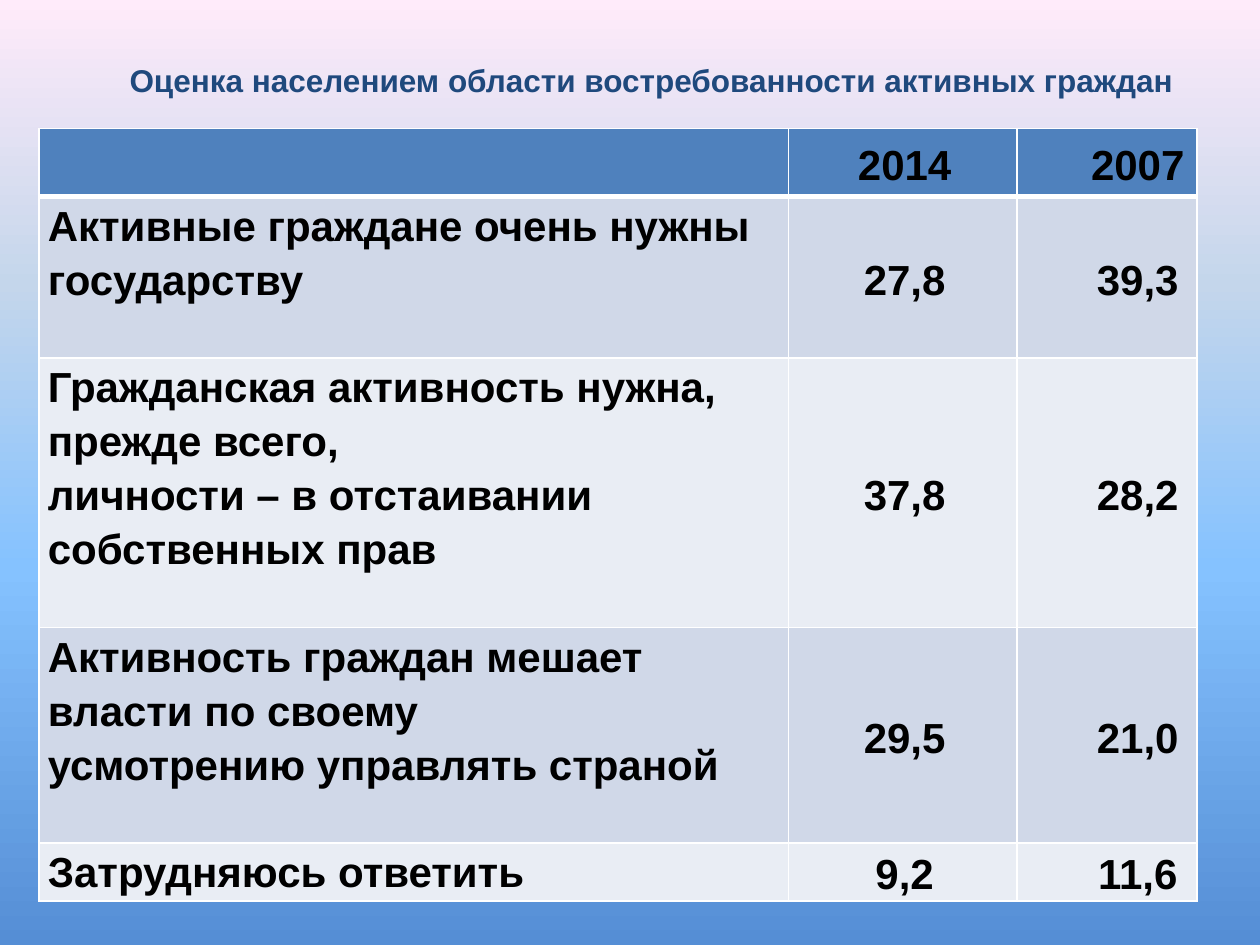
from dataclasses import dataclass

from pptx import Presentation
from pptx.dml.color import RGBColor
from pptx.enum.text import MSO_ANCHOR, PP_ALIGN
from pptx.oxml import parse_xml
from pptx.oxml.ns import nsdecls
from pptx.util import Inches, Pt


@dataclass(frozen=True)
class Theme:
    font: str = "Arial"
    title_size: int = 18
    table_size: int = 24
    title: str = "1F497D"
    text: str = "000000"
    header: str = "4F81BD"
    bands: tuple = ("D0D8E8", "E9EDF4")
    border: str = "FFFFFF"
    line: int = 1
    header_line: int = 3
    background: tuple = ((0, "558ED5"), (40, "85C2FF"), (70, "C4D6EB"), (100, "FFEBFA"))


THEME = Theme()
WIDTH, HEIGHT = 10, 7.5
TITLE_BOX = (0.51, 0.23, 9.32, 0.6)
TABLE_BOX = (0.31, 1.02, 9.19, 6.1)
COLUMNS = (5.95, 1.81, 1.43)
ROWS = (0.54, 1.28, 2.14, 1.71, 0.43)
INDENTS = (-0.02, 0.03, 0.49)

TITLE = "Оценка населением области востребованности активных граждан"
DATA = (
    ((), "2014", "2007"),
    (("Активные граждане очень нужны государству",), "27,8", "39,3"),
    (("Гражданская активность нужна, прежде всего,",
      "личности – в отстаивании собственных прав"), "37,8", "28,2"),
    (("Активность граждан мешает власти по своему",
      "усмотрению управлять страной"), "29,5", "21,0"),
    (("Затрудняюсь ответить",), "9,2", "11,6"),
)


def paint_background(slide):
    stops = "".join(
        f'<a:gs pos="{pos * 1000}"><a:srgbClr val="{color}"/></a:gs>'
        for pos, color in THEME.background)
    slide.element.cSld.insert(0, parse_xml(
        f'<p:bg {nsdecls("p", "a")}><p:bgPr><a:gradFill rotWithShape="1">'
        f'<a:gsLst>{stops}</a:gsLst><a:lin ang="16200000" scaled="0"/>'
        '</a:gradFill><a:effectLst/></p:bgPr></p:bg>'))


def add_run(p, text, size, color):
    r = p.add_run()
    r.text = text
    r.font.name = THEME.font
    r.font.size = Pt(size)
    r.font.bold = True
    r.font.color.rgb = RGBColor.from_string(color)


def add_title(slide, box):
    tf = slide.shapes.add_textbox(*map(Inches, box)).text_frame
    tf.word_wrap = True
    tf.vertical_anchor = MSO_ANCHOR.BOTTOM
    p = tf.paragraphs[0]
    p.alignment = PP_ALIGN.CENTER
    add_run(p, TITLE, THEME.title_size, THEME.title)


def style_cell(cell, row):
    cell.fill.solid()
    color = THEME.bands[(row - 1) % 2] if row else THEME.header
    cell.fill.fore_color.rgb = RGBColor.from_string(color)
    cell.margin_left = cell.margin_right = Inches(0.07)
    cell.margin_top = cell.margin_bottom = 0
    widths = {"L": THEME.line, "R": THEME.line,
              "T": THEME.header_line if row == 1 else THEME.line,
              "B": THEME.header_line if row == 0 else THEME.line}
    tcPr = cell._tc.get_or_add_tcPr()
    for i, (side, width) in enumerate(widths.items()):
        tcPr.insert(i, parse_xml(
            f'<a:ln{side} {nsdecls("a")} w="{Pt(width)}"><a:solidFill>'
            f'<a:srgbClr val="{THEME.border}"/></a:solidFill></a:ln{side}>'))


def fill_cell(cell, lines, col):
    """Write one paragraph per line; the first column holds left-aligned labels."""
    cell.vertical_anchor = MSO_ANCHOR.MIDDLE if col else MSO_ANCHOR.TOP
    tf = cell.text_frame
    for i, line in enumerate(lines):
        p = tf.add_paragraph() if i else tf.paragraphs[0]
        p.alignment = PP_ALIGN.CENTER if col else PP_ALIGN.LEFT
        p.line_spacing = 1.15
        pPr = p._p.get_or_add_pPr()
        pPr.set("marL", "0")
        pPr.set("indent", str(Inches(INDENTS[col])))
        add_run(p, line, THEME.table_size, THEME.text)


def add_survey_table(slide, box):
    table = slide.shapes.add_table(len(ROWS), len(COLUMNS), *map(Inches, box)).table
    left, top, width, height = box
    for column, share in zip(table.columns, COLUMNS):
        column.width = Inches(width * share / sum(COLUMNS))
    for row, share in zip(table.rows, ROWS):
        row.height = Inches(height * share / sum(ROWS))
    for r, (label, *values) in enumerate(DATA):
        for c, lines in enumerate((label, *((value,) for value in values))):
            cell = table.cell(r, c)
            style_cell(cell, r)
            fill_cell(cell, lines, c)


def main():
    prs = Presentation()
    prs.slide_width, prs.slide_height = Inches(WIDTH), Inches(HEIGHT)
    slide = prs.slides.add_slide(prs.slide_layouts[6])
    paint_background(slide)
    add_title(slide, TITLE_BOX)
    add_survey_table(slide, TABLE_BOX)
    prs.save("out.pptx")


if __name__ == "__main__":
    main()
